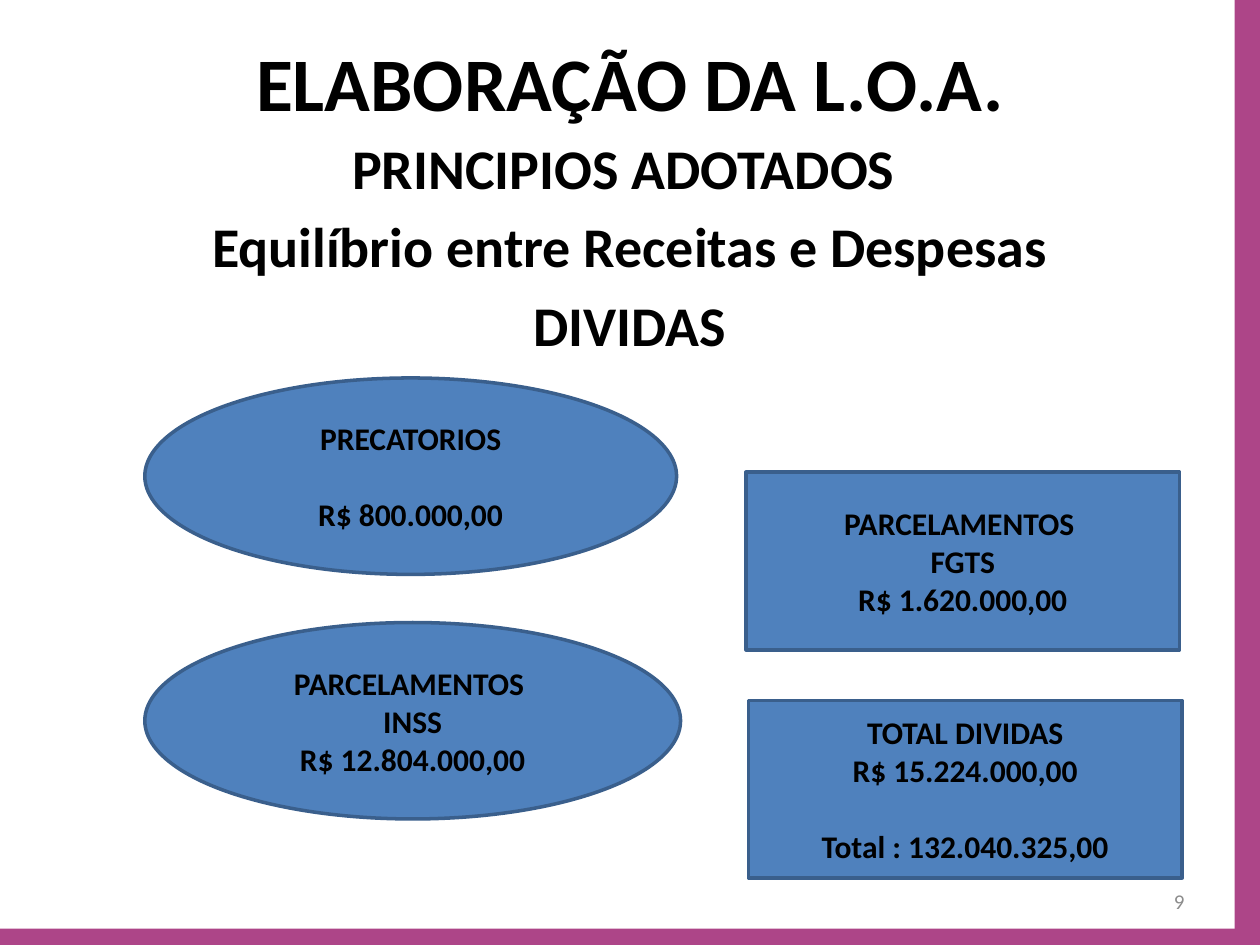
from pptx import Presentation
from pptx.dml.color import RGBColor
from pptx.enum.shapes import MSO_SHAPE
from pptx.enum.text import MSO_ANCHOR, MSO_AUTO_SIZE, PP_ALIGN
from pptx.util import Cm, Pt

COLORS = {
    "text": "000000",
    "number": "8C8C8C",
    "debt": "4F81BD",
    "outline": "3A5F8C",
    "border": "AD4588",
}


def write(shape, lines, size, color="text", bold=True, align=PP_ALIGN.CENTER,
          anchor=MSO_ANCHOR.MIDDLE, gaps=None):
    """Fill a shape with one paragraph per line; gaps maps line index to space before."""
    frame = shape.text_frame
    frame.word_wrap = True
    frame.auto_size = MSO_AUTO_SIZE.NONE
    frame.vertical_anchor = anchor
    for i, line in enumerate(lines):
        paragraph = frame.paragraphs[0] if i == 0 else frame.add_paragraph()
        paragraph.text = line
        paragraph.alignment = align
        paragraph.space_before = Pt((gaps or {}).get(i, 0))
        paragraph.font.name = "Calibri"
        paragraph.font.size = Pt(size)
        paragraph.font.bold = bold
        paragraph.font.color.rgb = RGBColor.from_string(COLORS[color])


def add_filled(kind, left, top, width, height, fill, outline=None):
    shape = slide.shapes.add_shape(kind, Cm(left), Cm(top), Cm(width), Cm(height))
    shape.shadow.inherit = False
    shape.fill.solid()
    shape.fill.fore_color.rgb = RGBColor.from_string(COLORS[fill])
    if outline:
        shape.line.color.rgb = RGBColor.from_string(COLORS[outline])
        shape.line.width = Pt(2)
    else:
        shape.line.fill.background()
    return shape


prs = Presentation()
prs.slide_width, prs.slide_height = Cm(25.4), Cm(19.05)
slide = prs.slides.add_slide(prs.slide_layouts[5])

title = slide.shapes.title
title.left, title.top, title.width, title.height = Cm(1.27), Cm(0.76), Cm(22.86), Cm(1.75)
write(title, ["ELABORAÇÃO DA L.O.A."], 43.2)

principles = slide.shapes.add_textbox(Cm(1.27), Cm(2.56), Cm(22.86), Cm(4.9))
write(principles,
      ["PRINCIPIOS ADOTADOS ", "Equilíbrio entre Receitas e Despesas", "DIVIDAS"],
      32, anchor=MSO_ANCHOR.TOP, gaps={1: 6.4, 2: 6.4})

page_number = slide.shapes.add_textbox(Cm(18.2), Cm(17.65), Cm(5.93), Cm(1.02))
write(page_number, ["9"], 12, color="number", bold=False, align=PP_ALIGN.RIGHT)

# A gap of 22 pt is one line of 18 pt text
debts = [
    (MSO_SHAPE.OVAL, 2.92, 7.62, 10.72, 3.96,
     ["PRECATORIOS", "R$ 800.000,00"], {1: 22}),
    (MSO_SHAPE.RECTANGLE, 15.04, 9.52, 8.74, 3.58,
     ["PARCELAMENTOS ", "FGTS", "R$ 1.620.000,00"], None),
    (MSO_SHAPE.OVAL, 2.92, 12.55, 10.8, 3.96,
     ["PARCELAMENTOS ", "INSS", "R$ 12.804.000,00"], None),
    (MSO_SHAPE.RECTANGLE, 15.09, 14.12, 8.74, 3.58,
     ["TOTAL DIVIDAS", "R$ 15.224.000,00", "Total : 132.040.325,00"], {2: 22}),
]
for kind, left, top, width, height, lines, gaps in debts:
    debt = add_filled(kind, left, top, width, height, "debt", "outline")
    write(debt, lines, 18, gaps=gaps)

add_filled(MSO_SHAPE.RECTANGLE, 24.89, 0, 0.51, 19.05, "border")
add_filled(MSO_SHAPE.RECTANGLE, 0, 18.72, 25.4, 0.33, "border")

prs.save("out.pptx")
